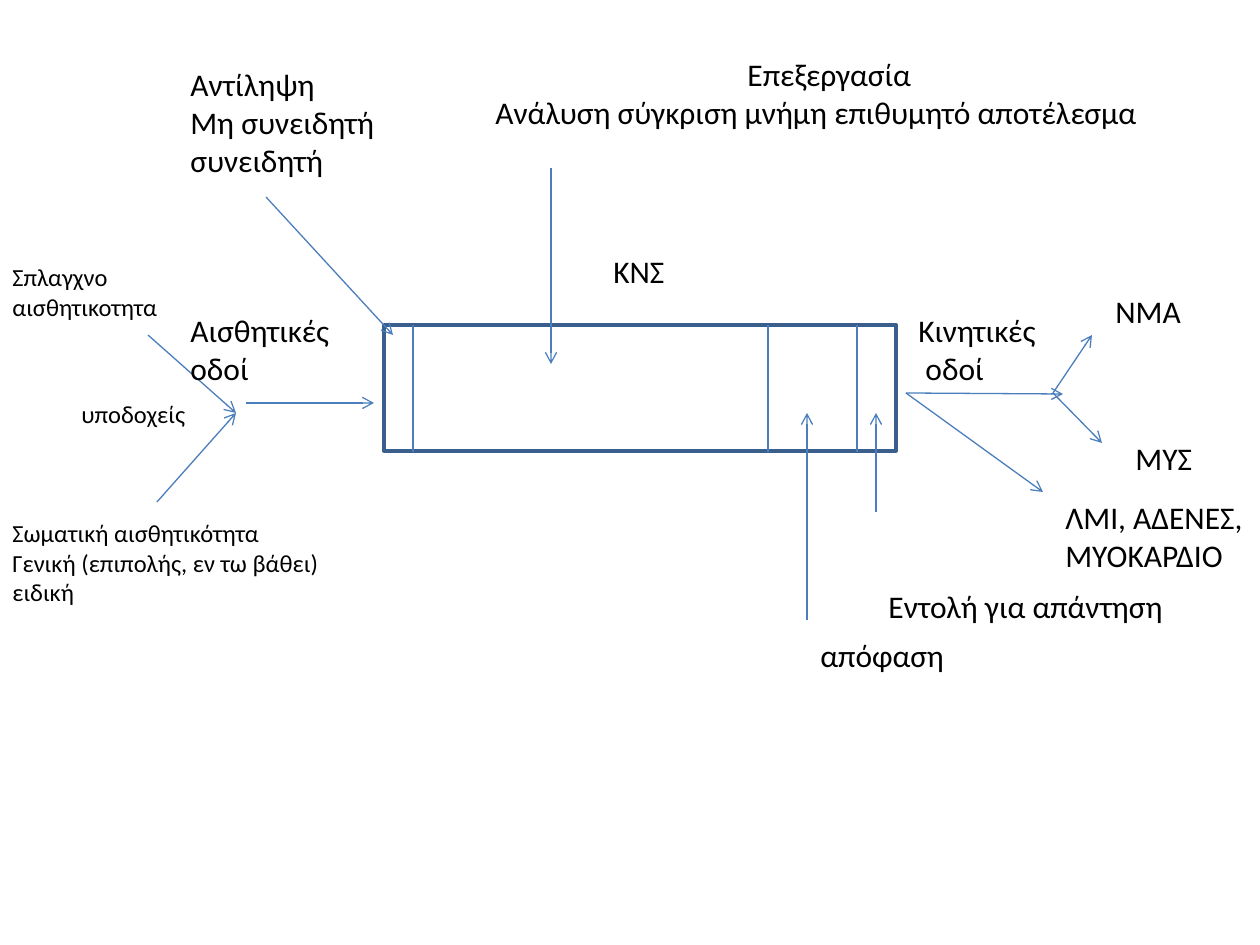
from dataclasses import dataclass

from lxml import etree
from pptx import Presentation
from pptx.dml.color import RGBColor
from pptx.enum.shapes import MSO_CONNECTOR, MSO_SHAPE
from pptx.enum.text import MSO_AUTO_SIZE
from pptx.oxml.ns import qn
from pptx.util import Pt

STRAIGHT = MSO_CONNECTOR.STRAIGHT
RECTANGLE = MSO_SHAPE.RECTANGLE
FIT_SHAPE = MSO_AUTO_SIZE.SHAPE_TO_FIT_TEXT
EMU_PER_PX = 914400 / 126
BLANK_LAYOUT = 6


@dataclass(frozen=True)
class Theme:
    font: str = "Calibri"
    ink: RGBColor = RGBColor(0x00, 0x00, 0x00)
    outline: RGBColor = RGBColor(0x3A, 0x5F, 0x8C)
    stroke: RGBColor = RGBColor(0x4B, 0x7E, 0xBC)
    body: int = 18
    small: int = 14
    outline_width: float = 2
    stroke_width: float = 0.75


def px(length):
    return round(length * EMU_PER_PX)


def write_text(frame, text, *, theme, size, first_indent=0):
    for index, line in enumerate(text.split("\n")):
        paragraph = frame.paragraphs[0] if index == 0 else frame.add_paragraph()
        if index == 0 and first_indent:
            paragraph._p.get_or_add_pPr().set("marL", str(px(first_indent)))
        run = paragraph.add_run()
        run.text = line
        run.font.name = theme.font
        run.font.size = Pt(size)
        run.font.color.rgb = theme.ink


class Diagram:
    """Draws the parts of the pathway diagram on one slide in one theme."""

    def __init__(self, slide, theme):
        self.shapes = slide.shapes
        self.theme = theme

    def label(self, text, left, top, width, height, size=None, wrap=False, first_indent=0):
        box = self.shapes.add_textbox(px(left), px(top), px(width), px(height))
        frame = box.text_frame
        frame.word_wrap = wrap
        frame.auto_size = FIT_SHAPE
        write_text(frame, text, theme=self.theme, size=size or self.theme.body,
                   first_indent=first_indent)

    def box(self, left, top, width, height):
        block = self.shapes.add_shape(RECTANGLE, px(left), px(top), px(width), px(height))
        block.shadow.inherit = False
        block.fill.background()
        block.line.color.rgb = self.theme.outline
        block.line.width = Pt(self.theme.outline_width)

    def line(self, start, end, arrow=False):
        connector = self.shapes.add_connector(STRAIGHT, *map(px, (*start, *end)))
        connector.line.color.rgb = self.theme.stroke
        connector.line.width = Pt(self.theme.stroke_width)
        if arrow:
            outline = connector.line._get_or_add_ln()
            etree.SubElement(outline, qn("a:tailEnd"), type="arrow")
        etree.SubElement(connector._element.spPr, qn("a:effectLst"))

    def arrow(self, start, end):
        self.line(start, end, arrow=True)


def main():
    presentation = Presentation()
    presentation.slide_width = px(1260)
    presentation.slide_height = px(945)
    slide = presentation.slides.add_slide(presentation.slide_layouts[BLANK_LAYOUT])
    theme = Theme()
    diagram = Diagram(slide, theme)

    cns_top, cns_height = 325, 126
    diagram.label("ΚΝΣ", 601, 246, 77, 50)
    diagram.box(384, cns_top, 512, cns_height)
    for divider in (413, 768, 857):
        diagram.line((divider, cns_top), (divider, cns_top + cns_height + 1))

    receptors, motor_exit, motor_fork = (236, 413), (906, 393), (1053, 393)
    arrows = [
        ((266, 197), (393, 335)),
        ((551, 168), (551, 364)),
        ((807, 620), (807, 413)),
        ((876, 512), (876, 413)),
        ((246, 403), (374, 403)),
        (motor_exit, (1063, 394)),
        (motor_fork, (1092, 335)),
        (motor_fork, (1102, 443)),
        ((148, 335), receptors),
        ((157, 502), receptors),
        (motor_exit, (1043, 492)),
    ]
    for start, end in arrows:
        diagram.arrow(start, end)

    diagram.label("Αντίληψη\nΜη συνειδητή\nσυνειδητή", 178, 59, 212, 127)
    diagram.label("Επεξεργασία\nΑνάλυση σύγκριση μνήμη επιθυμητό αποτέλεσμα",
                  483, 49, 674, 89, first_indent=252)
    diagram.label("απόφαση", 808, 630, 151, 50)
    diagram.label("Εντολή για απάντηση", 876, 581, 310, 50)
    diagram.label("Αισθητικές\nοδοί", 178, 305, 173, 89)
    diagram.label("Κινητικές\n οδοί", 906, 305, 144, 89)
    diagram.label("ΝΜΑ", 1103, 286, 92, 50)
    diagram.label("ΜΥΣ", 1123, 433, 83, 50)
    diagram.label("ΛΜΙ, ΑΔΕΝΕΣ,\nΜΥΟΚΑΡΔΙΟ", 1053, 492, 204, 89)

    diagram.label("υποδοχείς", 69, 393, 130, 43, size=theme.small)
    diagram.label("Σπλαγχνο\nαισθητικοτητα", 0, 256, 186, 72, size=theme.small, wrap=True)
    diagram.label("Σωματική αισθητικότητα\nΓενική (επιπολής, εν τω βάθει)\nειδική",
                  0, 512, 334, 102, size=theme.small)

    presentation.save("out.pptx")


if __name__ == "__main__":
    main()
